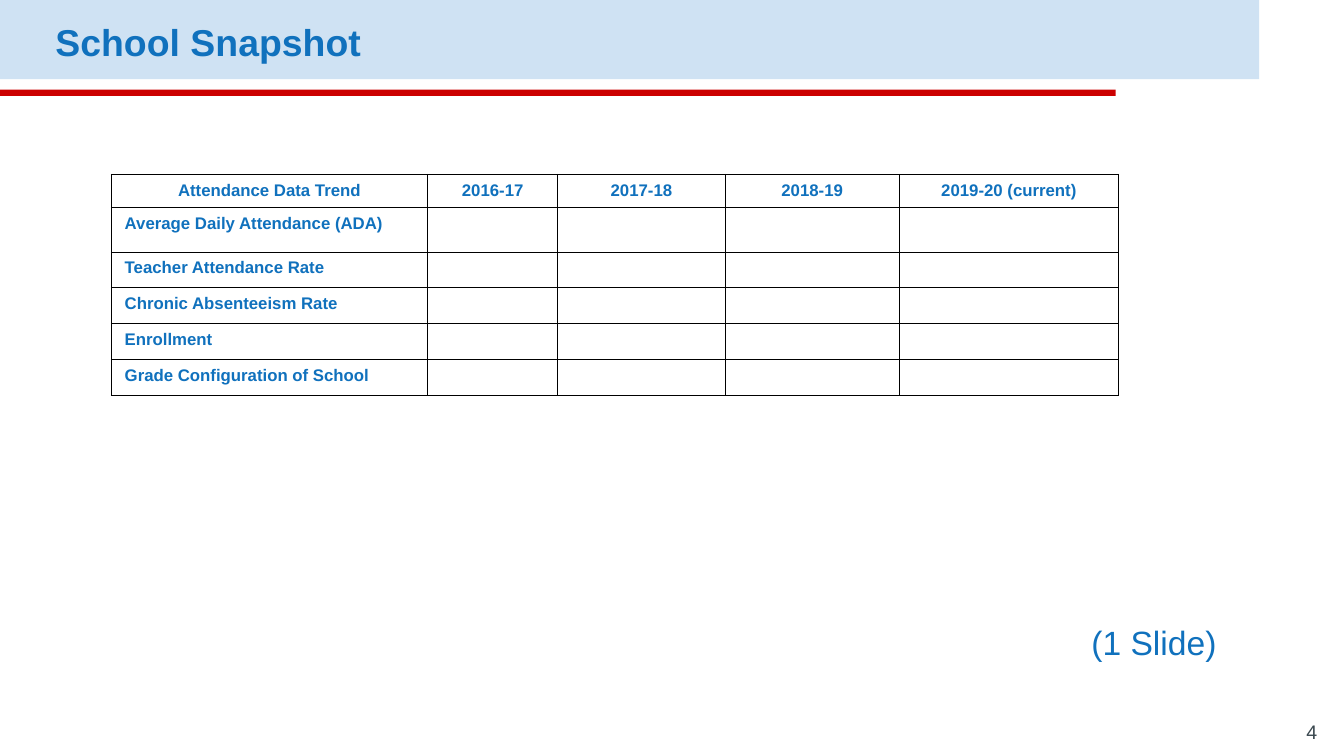
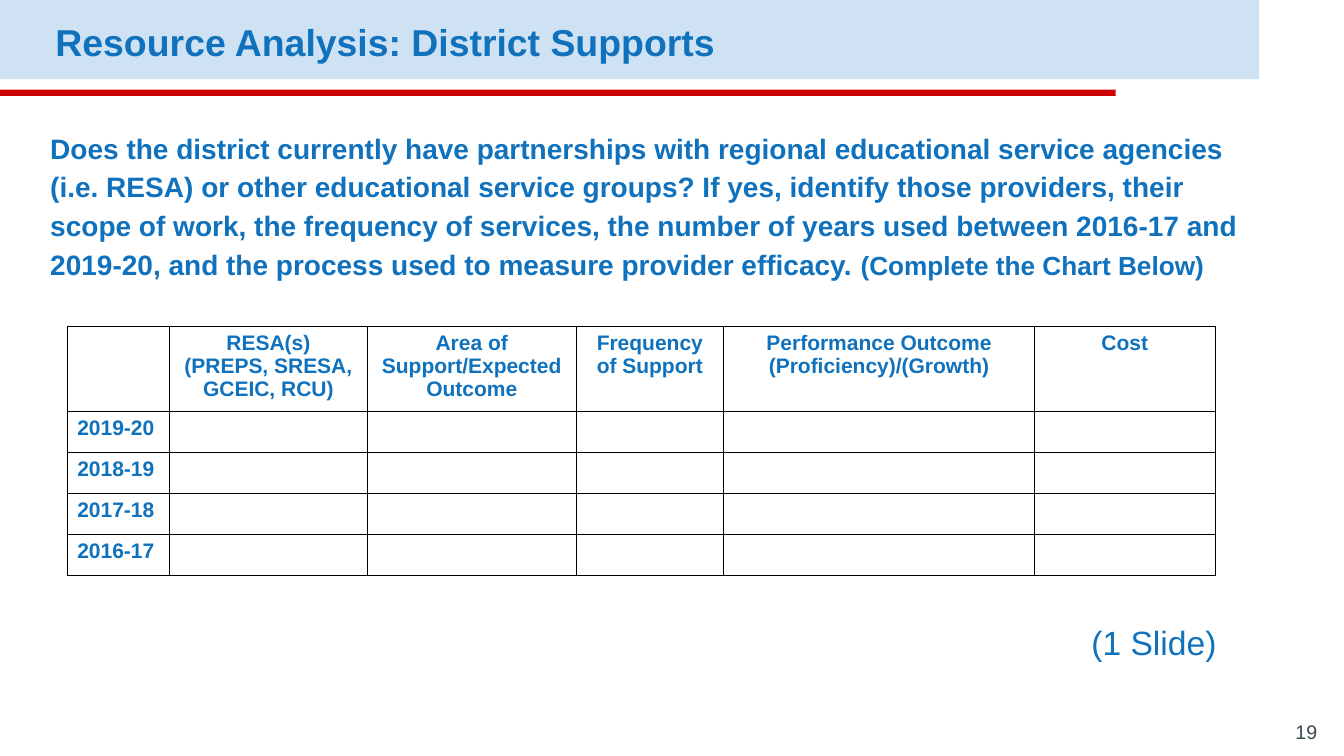
import dataclasses

import lxml.etree
import pptx
import pptx.dml.color
import pptx.enum.shapes
import pptx.enum.text
import pptx.oxml.ns
import pptx.slide
import pptx.table
import pptx.text.text
import pptx.util

Pt = pptx.util.Pt
Align = pptx.enum.text.PP_ALIGN
Anchor = pptx.enum.text.MSO_ANCHOR

FONT = "Arial"
BLUE = "1071BD"
PALE = "CFE2F3"
RED = "CC0000"
GREY = "3A484F"
BLACK = "000000"


@dataclasses.dataclass(frozen=True)
class Box:
    left: float
    top: float
    width: float
    height: float


@dataclasses.dataclass(frozen=True)
class Run:
    text: str
    size: float
    bold: bool = False
    hue: str = BLUE


@dataclasses.dataclass(frozen=True)
class Label:
    box: Box
    runs: tuple[Run, ...]
    align: Align = Align.LEFT
    anchor: Anchor = Anchor.TOP
    inset: float = 7.2
    space: float = 1.0


@dataclasses.dataclass(frozen=True)
class Grid:
    left: float
    top: float
    cols: tuple[float, ...]
    rows: tuple[float, ...]
    heads: tuple[str, ...]
    sides: tuple[str, ...]
    size: float
    inset: tuple[float, float]


@dataclasses.dataclass(frozen=True)
class Page:
    title: str
    number: str
    grid: Grid
    labels: tuple[Label, ...] = ()


BANDS = ((Box(0, 0, 899.5, 56.5), PALE), (Box(0, 64, 797, 4.5), RED))

PAGES = (
    Page(
        "School Snapshot",
        "4",
        Grid(
            79.5, 124.5,
            (226, 93, 119.5, 124.5, 156.5),
            (23.5, 31.5) + (25.7,) * 4,
            ("Attendance Data Trend", "2016-17", "2017-18", "2018-19",
             "2019-20 (current)"),
            ("Average Daily Attendance (ADA)", "Teacher Attendance Rate",
             "Chronic Absenteeism Rate", "Enrollment",
             "Grade Configuration of School"),
            12, (9.6, 4.8),
        ),
    ),
    Page(
        "Resource Analysis: District Supports",
        "19",
        Grid(
            48, 233,
            (73, 141.5, 149, 105.5, 222, 129),
            (60,) + (29.3,) * 4,
            ("", "RESA(s)\n(PREPS, SRESA, GCEIC, RCU)",
             "Area of Support/Expected Outcome", "Frequency of Support",
             "Performance Outcome (Proficiency)/(Growth)", "Cost"),
            ("2019-20", "2018-19", "2017-18", "2016-17"),
            15, (7.2, 3.6),
        ),
        (
            Label(
                Box(28.8, 83, 871, 394),
                (
                    Run("Does the district currently have partnerships with "
                        "regional educational service agencies (i.e. RESA) or "
                        "other educational service groups? If yes, identify "
                        "those providers, their scope of work, the frequency "
                        "of services, the number of years used between 2016-17 "
                        "and 2019-20, and the process used to measure provider "
                        "efficacy. ", 20, True),
                    Run("(Complete the Chart Below)", 18.7, True),
                ),
                space=1.15,
            ),
        ),
    ),
)


def shade(code: str) -> pptx.dml.color.RGBColor:
    return pptx.dml.color.RGBColor.from_string(code)


def write(para: pptx.text.text._Paragraph, run: Run) -> None:
    part = para.add_run()
    part.text = run.text
    part.font.name = FONT
    part.font.size = Pt(run.size)
    part.font.bold = run.bold
    part.font.color.rgb = shade(run.hue)


def add_band(slide: pptx.slide.Slide, box: Box, hue: str) -> None:
    band = slide.shapes.add_shape(
        pptx.enum.shapes.MSO_SHAPE.RECTANGLE,
        Pt(box.left), Pt(box.top), Pt(box.width), Pt(box.height))
    band.shadow.inherit = False
    band.fill.solid()
    band.fill.fore_color.rgb = shade(hue)
    band.line.fill.background()


def add_label(slide: pptx.slide.Slide, label: Label) -> None:
    box = label.box
    frame = slide.shapes.add_textbox(
        Pt(box.left), Pt(box.top), Pt(box.width), Pt(box.height)).text_frame
    frame.word_wrap = True
    frame.vertical_anchor = label.anchor
    frame.margin_left = frame.margin_right = Pt(7.2)
    frame.margin_top = frame.margin_bottom = Pt(label.inset)
    para = frame.paragraphs[0]
    para.alignment = label.align
    para.line_spacing = label.space
    for run in label.runs:
        write(para, run)


def add_lines(cell: pptx.table._Cell) -> None:
    name = pptx.oxml.ns.qn
    props = cell._tc.get_or_add_tcPr()
    for side in ("a:lnL", "a:lnR", "a:lnT", "a:lnB"):
        line = lxml.etree.SubElement(props, name(side), w=str(Pt(0.75)))
        fill = lxml.etree.SubElement(line, name("a:solidFill"))
        lxml.etree.SubElement(fill, name("a:srgbClr"), val=BLACK)


def fill_cell(cell: pptx.table._Cell, text: str, grid: Grid,
              align: Align) -> None:
    add_lines(cell)
    cell.fill.background()
    wide, high = grid.inset
    cell.margin_left = cell.margin_right = Pt(wide)
    cell.margin_top = cell.margin_bottom = Pt(high if text else 0)
    if not text:
        return
    frame = cell.text_frame
    for place, line in enumerate(text.split("\n")):
        para = frame.add_paragraph() if place else frame.paragraphs[0]
        para.alignment = align
        write(para, Run(line, grid.size, True))


def add_grid(slide: pptx.slide.Slide, grid: Grid) -> None:
    table = slide.shapes.add_table(
        len(grid.rows), len(grid.cols), Pt(grid.left), Pt(grid.top),
        Pt(sum(grid.cols)), Pt(sum(grid.rows))).table
    table.horz_banding = False
    table.first_row = False
    for col, width in zip(table.columns, grid.cols):
        col.width = Pt(width)
    for row, height in zip(table.rows, grid.rows):
        row.height = Pt(height)
    blanks = ("",) * (len(grid.cols) - 1)
    lines = (grid.heads,) + tuple((side,) + blanks for side in grid.sides)
    for place, (row, texts) in enumerate(zip(table.rows, lines)):
        align = Align.LEFT if place else Align.CENTER
        for cell, text in zip(row.cells, texts):
            fill_cell(cell, text, grid, align)


def add_page(deck: pptx.Presentation, page: Page) -> None:
    slide = deck.slides.add_slide(deck.slide_layouts[6])
    for box, hue in BANDS:
        add_band(slide, box, hue)
    title = Label(Box(32.5, 3.5, 867, 47.5), (Run(page.title, 26.7, True),),
                  anchor=Anchor.MIDDLE, space=1.15)
    number = Label(Box(890.5, 513.5, 57.5, 24.5),
                   (Run(page.number, 14, hue=GREY),),
                   Align.RIGHT, Anchor.BOTTOM)
    note = Label(Box(772.5, 440.5, 168, 39.5), (Run("(1 Slide)", 24),),
                 inset=3.6)
    for label in (title, *page.labels, number, note):
        add_label(slide, label)
    add_grid(slide, page.grid)


def main() -> None:
    deck = pptx.Presentation()
    deck.slide_width = Pt(960)
    deck.slide_height = Pt(540)
    for page in PAGES:
        add_page(deck, page)
    deck.save("out.pptx")


if __name__ == "__main__":
    main()
